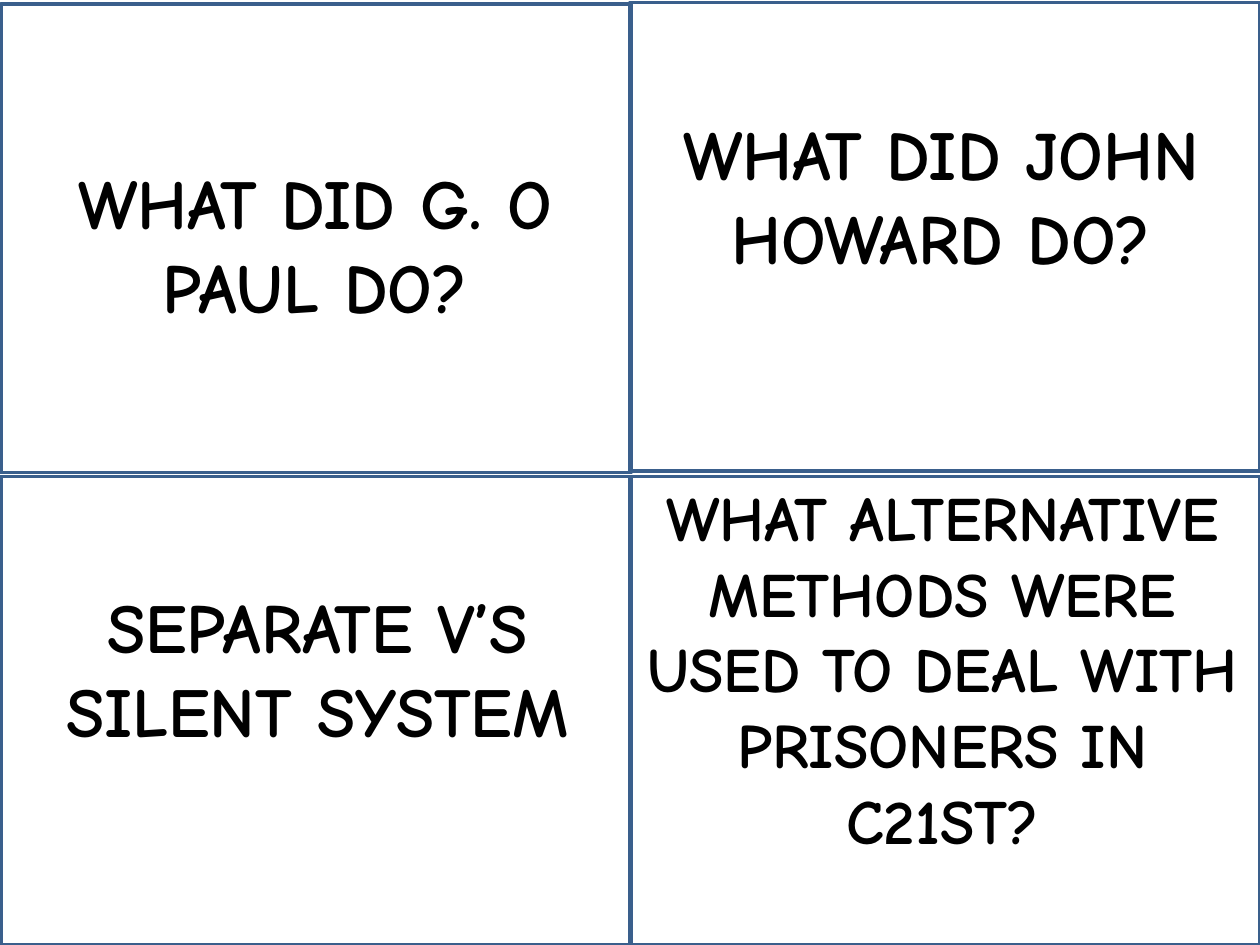
from dataclasses import dataclass

from pptx import Presentation
from pptx import util as u
from pptx.dml.color import RGBColor
from pptx.enum import shapes, text

PX = 9144
CARD_W, CARD_H = 500, 372
FONT = "Comic Neue"
INK = "000000"
BORDER = "3A5F8C"


@dataclass
class Box:
    x: int
    y: int
    w: int
    h: int

    def emu(self) -> list[int]:
        return [v * PX for v in (self.x, self.y, self.w, self.h)]


@dataclass
class Question:
    words: str
    box: Box
    size: int = 40


CARDS = [Box(x, y, CARD_W, CARD_H)
         for x, y in ((500, 2), (500, 378), (1, 3), (1, 378))]

QUESTIONS = [
    Question("WHAT DID G. O PAUL DO?", Box(0, 122, 500, 145)),
    Question("WHAT DID JOHN HOWARD DO?", Box(499, 83, 496, 212)),
    Question("SEPARATE V’S SILENT SYSTEM", Box(4, 458, 496, 212)),
    Question("WHAT ALTERNATIVE METHODS WERE USED TO DEAL WITH PRISONERS IN C21ST?",
             Box(500, 375, 496, 374), 36),
]


def color(value: str) -> RGBColor:
    return RGBColor.from_string(value)


def draw_card(s, box: Box) -> None:
    sp = s.shapes.add_shape(shapes.MSO_SHAPE.RECTANGLE, *box.emu())
    sp.shadow.inherit = False
    sp.fill.background()
    sp.line.color.rgb = color(BORDER)
    sp.line.width = u.Pt(2)


def draw_question(s, question: Question) -> None:
    tf = s.shapes.add_textbox(*question.box.emu()).text_frame
    tf.word_wrap = True
    tf.auto_size = text.MSO_AUTO_SIZE.SHAPE_TO_FIT_TEXT
    tf.text = question.words
    p = tf.paragraphs[0]
    p.alignment = text.PP_ALIGN.CENTER
    r = p.runs[0]
    r.font.name = FONT
    r.font.size = u.Pt(question.size)
    r.font.bold = True
    r.font.color.rgb = color(INK)


def main() -> None:
    prs = Presentation()
    prs.slide_width, prs.slide_height = 1000 * PX, 750 * PX
    s = prs.slides.add_slide(prs.slide_layouts[6])
    for card in CARDS:
        draw_card(s, card)
    for question in QUESTIONS:
        draw_question(s, question)
    prs.save("out.pptx")


if __name__ == "__main__":
    main()
